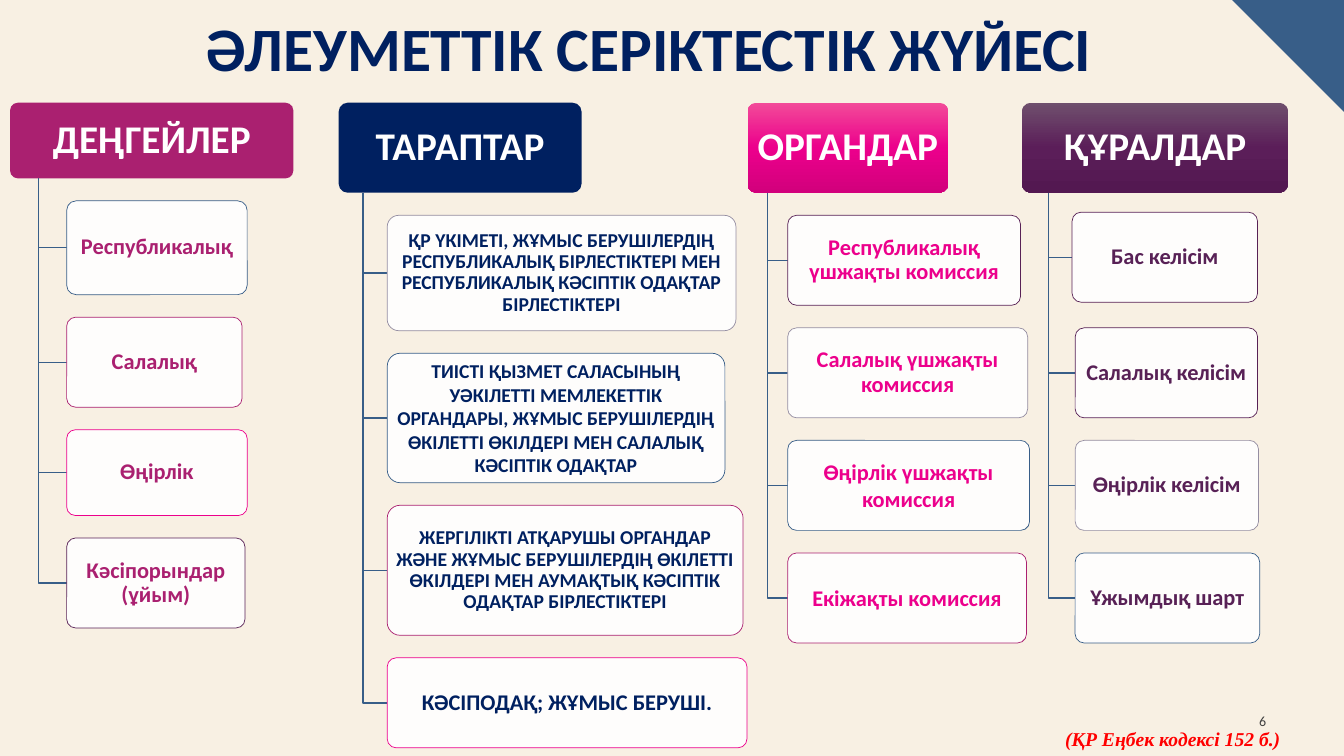
import pptx
import pptx.util
import pptx.dml.color
import pptx.enum.shapes
import pptx.enum.text
import pptx.oxml
import pptx.oxml.ns
import copy

TITLE = "ӘЛЕУМЕТТІК СЕРІКТЕСТІК ЖҮЙЕСІ"
NOTE = "(ҚР Еңбек кодексі 152 б.)"
PAGE = "6"

HEADS = [
    ("ДЕҢГЕЙЛЕР", 7.2, 202.3, 54, "berry", "berry"),
    ("ТАРАПТАР", 241.9, 173.5, 64.3, "navy", "navy"),
    ("ОРГАНДАР", 534, 143.3, 64.3, "glow", "pink"),
    ("ҚҰРАЛДАР", 730, 190, 64.3, "dusk", "plum"),
]
KIDS = [
    [
        ("Республикалық", 128.9, 67, "blue", {}),
        ("Салалық", 125.3, 64.3, "berry", {}),
        ("Өңірлік", 128.9, 61.2, "pink", {}),
        ("Кәсіпорындар (ұйым)", 127.4, 64.3, "plum", {}),
    ],
    [
        ("ҚР ҮКІМЕТІ, ЖҰМЫС БЕРУШІЛЕРДІҢ РЕСПУБЛИКАЛЫҚ БІРЛЕСТІКТЕРІ МЕН "
         "РЕСПУБЛИКАЛЫҚ КӘСІПТІК ОДАҚТАР БІРЛЕСТІКТЕРІ", 249.1, 82.4, "gray", {"size": "small"}),
        ("ТИІСТІ ҚЫЗМЕТ САЛАСЫНЫҢ УӘКІЛЕТТІ МЕМЛЕКЕТТІК ОРГАНДАРЫ, ЖҰМЫС БЕРУШІЛЕРДІҢ "
         "ӨКІЛЕТТІ ӨКІЛДЕРІ МЕН САЛАЛЫҚ КӘСІПТІК ОДАҚТАР", 241.2, 92.5, "blue",
         {"size": "small", "lead": 1.0}),
        ("ЖЕРГІЛІКТІ АТҚАРУШЫ ОРГАНДАР ЖӘНЕ ЖҰМЫС БЕРУШІЛЕРДІҢ ӨКІЛЕТТІ ӨКІЛДЕРІ МЕН "
         "АУМАҚТЫҚ КӘСІПТІК ОДАҚТАР БІРЛЕСТІКТЕРІ", 254.2, 92.9, "berry", {"size": "small"}),
        ("КӘСІПОДАҚ; ЖҰМЫС БЕРУШІ.", 257, 64.3, "pink", {}),
    ],
    [
        ("Республикалық үшжақты комиссия", 166.3, 64.3, "plum", {}),
        ("Салалық үшжақты комиссия", 171.4, 64.3, "gray", {}),
        ("Өңірлік үшжақты комиссия", 172.8, 64.3, "blue", {"lead": 1.0}),
        ("Екіжақты комиссия", 170.6, 64.3, "berry", {"lead": 1.0}),
    ],
    [
        ("Бас келісім", 132.5, 64.3, "plum", {"shift": 2.2}),
        ("Салалық келісім", 130.3, 64.3, "plum", {}),
        ("Өңірлік келісім", 131, 64.3, "gray", {}),
        ("Ұжымдық шарт", 131.8, 64.3, "blue", {}),
    ],
]
THEME = {
    "font": "Calibri", "serif": "Times New Roman",
    "title": 44, "head": 28, "item": 16, "small": 14, "page": 10,
    "back": "F8F0E3", "white": "FFFFFF", "navy": "002060", "blue": "385E88",
    "berry": "AA2070", "pink": "EC008C", "plum": "582156", "gray": "958EA2",
    "dark": "404040", "red": "FF0000",
    "glow": ["F24B99", "EC008C", "D2007C"],
    "dusk": ["6F4F6D", "5B1E59", "531851"],
}
TOP, GAP, STEP = 73.4, 16.1, 0.1

Pt = pptx.util.Pt
MSO = pptx.enum.shapes.MSO_SHAPE
ALIGN = pptx.enum.text.PP_ALIGN
ANCHOR = pptx.enum.text.MSO_ANCHOR
qn = pptx.oxml.ns.qn


def tint(name):
    return pptx.dml.color.RGBColor.from_string(THEME[name])


def write(shape, text, size, ink, align=ALIGN.CENTER, lead=None, font="font", bold=True):
    frame = shape.text_frame
    frame.word_wrap = True
    frame.text = text
    para = frame.paragraphs[0]
    para.alignment = align
    para.line_spacing = lead
    para.font.name = THEME[font]
    para.font.size = Pt(THEME[size])
    para.font.bold = bold
    para.font.color.rgb = tint(ink)
    return frame


def paint(shape, fill):
    if isinstance(THEME[fill], str):
        shape.fill.solid()
        shape.fill.fore_color.rgb = tint(fill)
        return
    shape.fill.gradient()
    shape.fill.gradient_angle = 270
    stops = shape.element.spPr.find(".//" + qn("a:gsLst"))
    stops.append(copy.deepcopy(stops[0]))
    for i, (stop, shade) in enumerate(zip(shape.fill.gradient_stops, THEME[fill])):
        stop.color.rgb = pptx.dml.color.RGBColor.from_string(shade)
        stop.position = i / 2


def card(slide, box, fill, text, size, ink, pad, lead=0.9):
    shape = slide.shapes.add_shape(MSO.ROUNDED_RECTANGLE, *map(Pt, box))
    shape.shadow.inherit = False
    shape.adjustments[0] = 0.1
    paint(shape, fill)
    shape.line.fill.background()
    frame = write(shape, text, size, ink, lead=lead)
    frame.vertical_anchor = ANCHOR.MIDDLE
    frame.margin_left = frame.margin_right = Pt(pad)
    frame.margin_top = frame.margin_bottom = Pt(pad / 2)
    return shape


def elbow(slide, left, top, right, low):
    pen = slide.shapes.build_freeform(Pt(left), Pt(top))
    pen.add_line_segments([(Pt(left), Pt(low)), (Pt(right), Pt(low))], close=False)
    line = pen.convert_to_shape()
    line.shadow.inherit = False
    line.fill.background()
    line.line.color.rgb = tint("blue")
    line.line.width = Pt(1)


def column(slide, head, kids):
    name, left, width, height, fill, ink = head
    card(slide, (left, TOP, width, height), fill, name, "head", "white", 4)
    trunk, edge = left + STEP * width, left + 2 * STEP * width
    base = TOP + height
    y = base + GAP
    for text, wide, tall, rim, opts in kids:
        shift = opts.get("shift", 0)
        x, top = edge - shift, y - shift
        elbow(slide, trunk, base, x, top + tall / 2)
        item = card(slide, (x, top, wide, tall), "white", text,
                    opts.get("size", "item"), ink, 2.2, opts.get("lead", 0.9))
        item.line.color.rgb = tint(rim)
        item.line.width = Pt(0.5)
        shade = item.element.spPr.find(qn("a:solidFill"))[0]
        alpha = pptx.oxml.parse_xml(
            '<a:alpha xmlns:a="http://schemas.openxmlformats.org/drawingml/2006/main" val="90000"/>')
        shade.append(alpha)
        y += tall + GAP


def main():
    deck = pptx.Presentation()
    deck.slide_width, deck.slide_height = Pt(960), Pt(540)
    slide = deck.slides.add_slide(deck.slide_layouts[5])
    slide.background.fill.solid()
    slide.background.fill.fore_color.rgb = tint("back")

    corner = slide.shapes.add_shape(MSO.RIGHT_TRIANGLE, Pt(880), Pt(0), Pt(80), Pt(80))
    corner.rotation = 180
    corner.shadow.inherit = False
    paint(corner, "blue")
    corner.line.fill.background()

    title = slide.shapes.title
    title.left, title.top, title.width, title.height = map(Pt, (49.7, 9.4, 828, 64))
    frame = write(title, TITLE, "title", "navy", lead=0.9)
    frame.vertical_anchor = ANCHOR.TOP
    frame.auto_size = pptx.enum.text.MSO_AUTO_SIZE.NONE

    page = slide.shapes.add_textbox(*map(Pt, (875.5, 500.4, 36, 28.8)))
    frame = write(page, PAGE, "page", "dark", ALIGN.RIGHT, bold=False)
    frame.vertical_anchor = ANCHOR.MIDDLE

    for head, kids in zip(HEADS, KIDS):
        column(slide, head, kids)

    note = slide.shapes.add_textbox(*map(Pt, (753.8, 515.5, 170, 24.5)))
    frame = write(note, NOTE, "small", "red", ALIGN.LEFT, font="serif")
    frame.word_wrap = False
    frame.paragraphs[0].font.italic = True

    deck.save("out.pptx")


if __name__ == "__main__":
    main()
